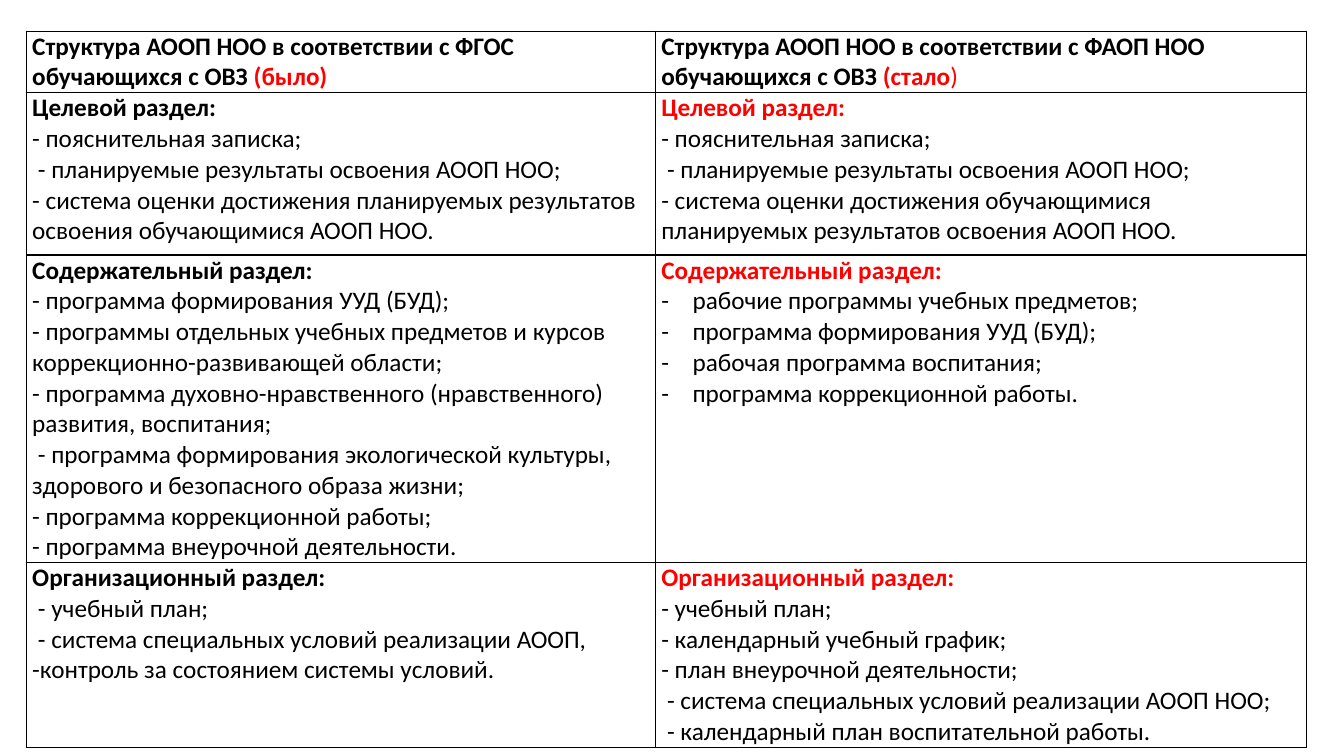
from lxml.etree import SubElement
from pptx import Presentation
from pptx.dml.color import RGBColor
from pptx.oxml.ns import qn
from pptx.util import Inches, Pt

BLACK, RED, WHITE = "000000", "FF0000", "FFFFFF"


def color(code):
    return RGBColor.from_string(code)


def write(para, text, size=18, font="Calibri", ink=BLACK, bold=False):
    run = para.add_run()
    run.text = text
    run.font.size = Pt(size)
    run.font.name = font
    run.font.bold = bold
    run.font.color.rgb = color(ink)


class Page:
    def __init__(self, deck):
        self.slide = deck.slides.add_slide(deck.slide_layouts[6])
        self.pad = Inches(0.06)
        self.hang = Inches(0.31)
        self.line = Pt(1)

    def table(self, left, top, cols, rows):
        frame = self.slide.shapes.add_table(
            len(rows), len(cols), Inches(left), Inches(top),
            Inches(sum(cols)), Inches(sum(rows)))
        grid = frame.table
        grid.first_row = grid.horz_banding = False
        for col, width in zip(grid.columns, cols):
            col.width = Inches(width)
        for row, height in zip(grid.rows, rows):
            row.height = Inches(height)
        for cell in grid.iter_cells():
            cell.margin_left = cell.margin_right = self.pad
            cell.margin_top = cell.margin_bottom = 0
            self.border(cell)
            cell.fill.solid()
            cell.fill.fore_color.rgb = color(WHITE)
        return grid

    def border(self, cell):
        props = cell._tc.get_or_add_tcPr()
        for side in ("lnL", "lnR", "lnT", "lnB"):
            edge = SubElement(props, qn("a:" + side), w=str(self.line))
            fill = SubElement(edge, qn("a:solidFill"))
            SubElement(fill, qn("a:srgbClr"), val=BLACK)

    def bullet(self, para):
        props = para._p.get_or_add_pPr()
        props.set("marL", str(self.hang))
        props.set("indent", str(-self.hang))
        SubElement(props, qn("a:buFont"), typeface="Calibri")
        SubElement(props, qn("a:buChar"), char="-")

    def head(self, cell, title, *marks):
        para = cell.text_frame.paragraphs[0]
        write(para, title, bold=True)
        for text, bold in marks:
            write(para, text, ink=RED, bold=bold)

    def section(self, cell, title, items, ink, dashed=False):
        frame = cell.text_frame
        write(frame.paragraphs[0], title, ink=ink, bold=True)
        for item in items:
            para = frame.add_paragraph()
            if dashed:
                self.bullet(para)
            write(para, item)


# Section title, old items, new items, new items bulleted
PARTS = [
    ("Целевой раздел:",
     ["- пояснительная записка;",
      " - планируемые результаты освоения АООП НОО;",
      "- система оценки достижения планируемых результатов освоения обучающимися АООП НОО."],
     ["- пояснительная записка;",
      " - планируемые результаты освоения АООП НОО;",
      "- система оценки достижения обучающимися планируемых результатов освоения АООП НОО."],
     False),
    ("Содержательный раздел:",
     ["- программа формирования УУД (БУД);",
      "- программы отдельных учебных предметов и курсов коррекционно-развивающей области;",
      "- программа духовно-нравственного (нравственного) развития, воспитания;",
      " - программа формирования экологической культуры, здорового и безопасного образа жизни;",
      "- программа коррекционной работы;",
      "- программа внеурочной деятельности."],
     ["рабочие программы учебных предметов;",
      "программа формирования УУД (БУД);",
      "рабочая программа воспитания;",
      "программа коррекционной работы."],
     True),
    ("Организационный раздел:",
     [" - учебный план;",
      " - система специальных условий реализации АООП,",
      "-контроль за состоянием системы условий."],
     ["- учебный план;",
      "- календарный учебный график;",
      "- план внеурочной деятельности;",
      " - система специальных условий реализации АООП НОО;",
      " - календарный план воспитательной работы."],
     False),
]


def main():
    deck = Presentation()
    deck.slide_width, deck.slide_height = Inches(13.33), Inches(7.5)
    page = Page(deck)
    grid = page.table(0.26, 0.31, [6.24, 6.46], [0.59, 1.61, 2.96, 1.83])

    # Header row
    page.head(grid.cell(0, 0),
              "Структура АООП НОО в соответствии с ФГОС обучающихся с ОВЗ ",
              ("(было)", True))
    page.head(grid.cell(0, 1),
              "Структура АООП НОО в соответствии с ФАОП НОО обучающихся с ОВЗ ",
              ("(стало", True), (")", False))

    # Sections before and after
    for row, (title, old, new, dashed) in enumerate(PARTS, 1):
        page.section(grid.cell(row, 0), title, old, BLACK)
        page.section(grid.cell(row, 1), title, new, RED, dashed)

    deck.save("out.pptx")


if __name__ == "__main__":
    main()
